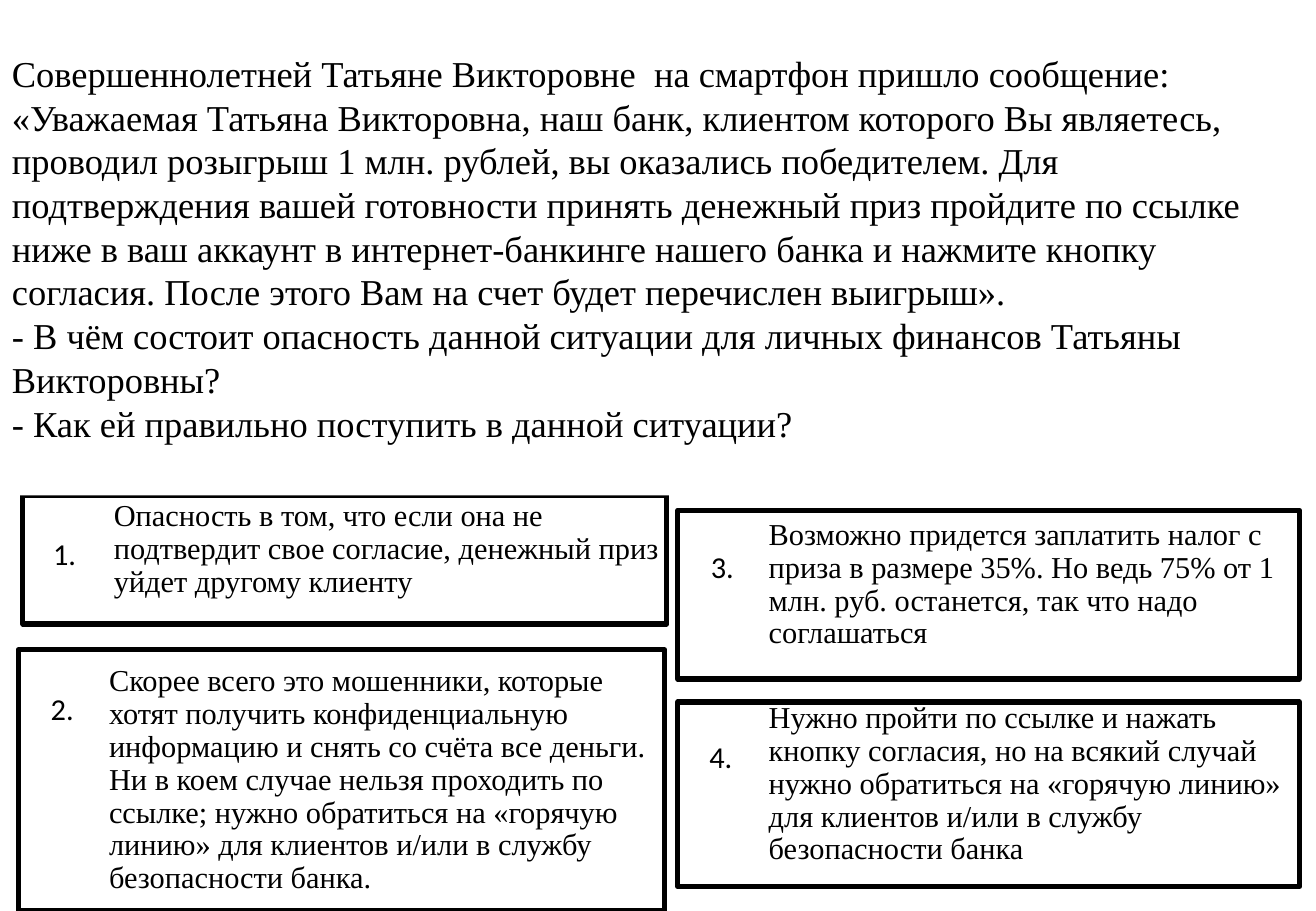
from dataclasses import dataclass

from pptx import Presentation
from pptx import util as u
from pptx.dml.color import RGBColor
from pptx.enum import shapes, text

COLORS = {"ink": "000000", "paper": "FFFFFF"}
SERIF, SANS = "Times New Roman", "Calibri"


@dataclass
class Answer:
    number: str
    wording: str
    left: float
    top: float
    width: float
    height: float
    number_left: float
    number_top: float
    bottom_inset: float = 0.41


QUESTION = [
    "Совершеннолетней Татьяне Викторовне  на смартфон пришло сообщение: "
    "«Уважаемая Татьяна Викторовна, наш банк, клиентом которого Вы являетесь, "
    "проводил розыгрыш 1 млн. рублей, вы оказались победителем. Для подтверждения "
    "вашей готовности принять денежный приз пройдите по ссылке ниже в ваш аккаунт "
    "в интернет-банкинге нашего банка и нажмите кнопку согласия. "
    "После этого Вам на счет будет перечислен выигрыш».",
    "- В чём состоит опасность данной ситуации для личных финансов Татьяны Викторовны?",
    "- Как ей правильно поступить в данной ситуации?",
]

ANSWERS = [
    Answer("1.", "Опасность в том, что если она не подтвердит свое согласие, "
           "денежный приз уйдет другому клиенту",
           0.48, 10.36, 13.46, 2.69, 0.86, 11.07),
    Answer("2.", "Скорее всего это мошенники, которые хотят получить конфиденциальную "
           "информацию и снять со счёта все деньги. Ни в коем случае нельзя проходить "
           "по ссылке; нужно обратиться на «горячую линию» для клиентов и/или в службу "
           "безопасности банка.",
           0.38, 13.59, 13.51, 5.46, 0.81, 14.3, bottom_inset=0),
    Answer("3.", "Возможно придется заплатить налог с приза в размере 35%. "
           "Но ведь 75% от 1 млн. руб. останется, так что надо соглашаться",
           14.17, 10.67, 13, 3.53, 14.61, 11.33),
    Answer("4.", "Нужно пройти по ссылке и нажать кнопку согласия, но на всякий случай "
           "нужно обратиться на «горячую линию» для клиентов и/или в службу "
           "безопасности банка",
           14.17, 14.68, 13, 3.86, 14.58, 15.32),
]


def color(name: str) -> RGBColor:
    return RGBColor.from_string(COLORS[name])


def fill_paper(box) -> None:
    box.fill.solid()
    box.fill.fore_color.rgb = color("paper")


def add_span(para, wording: str, font: str, size: float) -> None:
    para.alignment = text.PP_ALIGN.LEFT
    span = para.add_run()
    span.text = wording
    span.font.name = font
    span.font.size = u.Pt(size)
    span.font.color.rgb = color("ink")


def draw_card(page, answer: Answer) -> None:
    box = page.shapes.add_shape(
        shapes.MSO_SHAPE.RECTANGLE, u.Cm(answer.left), u.Cm(answer.top),
        u.Cm(answer.width), u.Cm(answer.height))
    box.shadow.inherit = False
    fill_paper(box)
    box.line.color.rgb = color("ink")
    box.line.width = u.Pt(3)
    frame = box.text_frame
    frame.word_wrap = True
    frame.vertical_anchor = text.MSO_ANCHOR.MIDDLE
    frame.margin_left = u.Cm(1.9)
    frame.margin_top = frame.margin_right = 0
    frame.margin_bottom = u.Cm(answer.bottom_inset)
    para = frame.paragraphs[0]
    para.line_spacing = 0.9
    add_span(para, answer.wording, SERIF, 18)


def draw_number(page, answer: Answer) -> None:
    box = page.shapes.add_textbox(
        u.Cm(answer.number_left), u.Cm(answer.number_top), u.Cm(1.15), u.Cm(1.02))
    box.text_frame.word_wrap = True
    add_span(box.text_frame.paragraphs[0], answer.number, SANS, 18)


def draw_question(page) -> None:
    box = page.shapes.add_textbox(0, 0, u.Cm(27.18), u.Cm(10.36))
    fill_paper(box)
    frame = box.text_frame
    frame.word_wrap = True
    frame.vertical_anchor = text.MSO_ANCHOR.MIDDLE
    for index, wording in enumerate(QUESTION):
        para = frame.add_paragraph() if index else frame.paragraphs[0]
        add_span(para, wording, SERIF, 21.6)


def main() -> None:
    deck = Presentation()
    deck.slide_width, deck.slide_height = u.Cm(27.51), u.Cm(19.05)
    page = deck.slides.add_slide(deck.slide_layouts[6])
    page.background.fill.solid()
    page.background.fill.fore_color.rgb = color("paper")

    # Answer cards, then the question over their upper edge
    for answer in ANSWERS:
        draw_card(page, answer)
    draw_question(page)

    # Answer numbers
    for answer in ANSWERS:
        draw_number(page, answer)

    deck.save("out.pptx")


if __name__ == "__main__":
    main()
